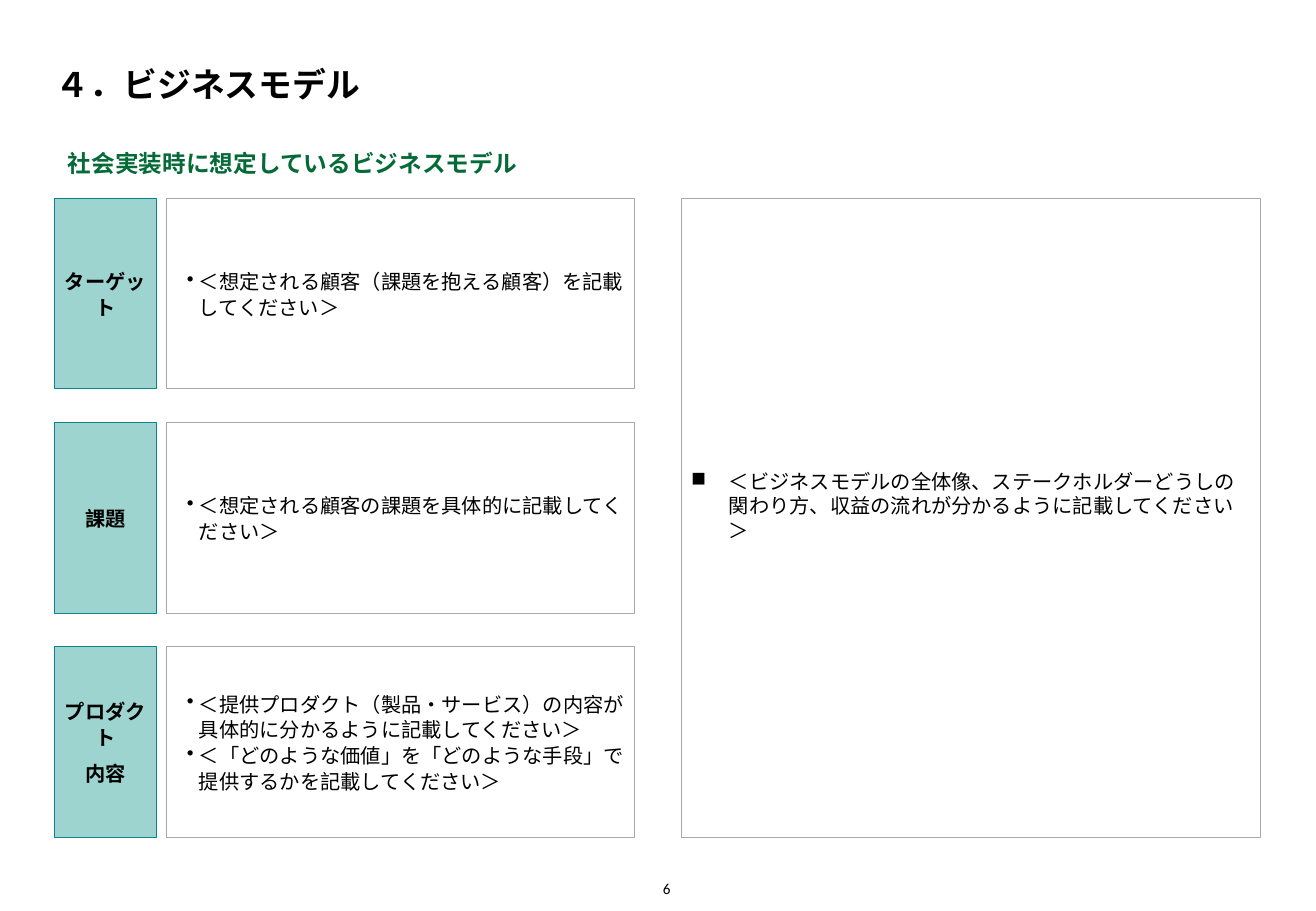
from dataclasses import dataclass

from lxml import etree
from pptx import Presentation
from pptx import util as u
from pptx.dml.color import RGBColor
from pptx.enum import shapes, text
from pptx.oxml import ns


@dataclass(frozen=True)
class Theme:
    ink: str = "000000"
    green: str = "046A38"
    mint: str = "9DD4CF"
    teal: str = "0D8390"
    gray: str = "A7A8AA"
    white: str = "FFFFFF"
    head: float = 20
    lead: float = 14
    body: float = 12
    note: float = 9


@dataclass(frozen=True)
class Area:
    left: float
    top: float
    width: float
    height: float


@dataclass(frozen=True)
class Style:
    size: float
    font: str = "Calibri"
    color: str = "000000"
    bold: bool = False
    align: text.PP_ALIGN = text.PP_ALIGN.LEFT
    anchor: text.MSO_ANCHOR = text.MSO_ANCHOR.MIDDLE
    inset: tuple[float, float, float, float] = (0.2, 0.2, 0.2, 0.2)
    space: float = 0
    pitch: float = 1
    bullet: str = ""
    margin: float = 0
    hang: float = 0


@dataclass(frozen=True)
class Row:
    label: tuple[str, ...]
    body: tuple[str, ...]


T = Theme()
NONE = (0, 0, 0, 0)
TITLE = Style(T.head, color=T.ink, bold=True, anchor=text.MSO_ANCHOR.BOTTOM, inset=NONE)
LEAD = Style(T.lead, color=T.green, bold=True, inset=(0.25, 0.13, 0.25, 0.13))
PAGE = Style(T.note, color=T.ink, align=text.PP_ALIGN.RIGHT,
             anchor=text.MSO_ANCHOR.BOTTOM, inset=NONE)
LABEL = Style(T.body, "Arial", T.ink, True, text.PP_ALIGN.CENTER, space=6, pitch=1.06)
BODY = Style(T.body, "Arial", T.ink, pitch=1.06, bullet="•", margin=0.48, hang=0.25)
MODEL = Style(T.body, color=T.ink, inset=(0.2, 0.2, 0.2, 0.7),
              bullet="■", margin=0.79, hang=0.79)

TOP, HIGH, STEP = 4.14, 3.99, 4.69
ROWS = (
    Row(("ターゲット",), ("＜想定される顧客（課題を抱える顧客）を記載してください＞",)),
    Row(("課題",), ("＜想定される顧客の課題を具体的に記載してください＞",)),
    Row(("プロダクト", "内容"),
        ("＜提供プロダクト（製品・サービス）の内容が具体的に分かるように記載してください＞",
         "＜「どのような価値」を「どのような手段」で提供するかを記載してください＞")),
)


def mark(para, style: Style) -> None:
    """Give a paragraph its bullet and hanging indent."""
    props = para._p.get_or_add_pPr()
    props.set("marL", str(u.Cm(style.margin)))
    props.set("indent", str(-u.Cm(style.hang)))
    etree.SubElement(props, ns.qn("a:buChar")).set("char", style.bullet)


def write(shape, lines: tuple[str, ...], style: Style) -> None:
    frame = shape.text_frame
    frame.word_wrap = True
    frame.vertical_anchor = style.anchor
    (frame.margin_left, frame.margin_top,
     frame.margin_right, frame.margin_bottom) = map(u.Cm, style.inset)
    for num, line in enumerate(lines):
        para = frame.add_paragraph() if num else frame.paragraphs[0]
        if style.bullet:
            mark(para, style)
        para.alignment = style.align
        para.line_spacing = style.pitch
        if num:
            para.space_before = u.Pt(style.space)
        run = para.add_run()
        run.text = line
        run.font.name = style.font
        run.font.size = u.Pt(style.size)
        run.font.bold = style.bold
        run.font.color.rgb = RGBColor.from_string(style.color)


def place(area: Area) -> tuple[u.Length, ...]:
    return u.Cm(area.left), u.Cm(area.top), u.Cm(area.width), u.Cm(area.height)


def add_text(slide, area: Area, line: str, style: Style) -> None:
    write(slide.shapes.add_textbox(*place(area)), (line,), style)


def add_box(slide, area: Area, lines: tuple[str, ...], style: Style,
            fill: str, edge: str) -> None:
    box = slide.shapes.add_shape(shapes.MSO_SHAPE.RECTANGLE, *place(area))
    box.shadow.inherit = False
    box.fill.solid()
    box.fill.fore_color.rgb = RGBColor.from_string(fill)
    box.line.color.rgb = RGBColor.from_string(edge)
    box.line.width = u.Pt(0.5)
    write(box, lines, style)


def main() -> None:
    deck = Presentation()
    deck.slide_width, deck.slide_height = u.Cm(27.51), u.Cm(19.05)
    slide = deck.slides.add_slide(deck.slide_layouts[6])
    add_text(slide, Area(1.17, 0.38, 25.2, 1.8), "４．ビジネスモデル", TITLE)
    add_text(slide, Area(1.17, 2.82, 12.09, 1.19),
             "社会実装時に想定しているビジネスモデル", LEAD)
    for num, row in enumerate(ROWS):
        top = TOP + num * STEP
        add_box(slide, Area(1.14, top, 2.13, HIGH), row.label, LABEL, T.mint, T.teal)
        add_box(slide, Area(3.48, top, 9.78, HIGH), row.body, BODY, T.white, T.gray)
    add_box(slide, Area(14.25, TOP, 12.09, 2 * STEP + HIGH),
            ("＜ビジネスモデルの全体像、ステークホルダーどうしの関わり方、"
             "収益の流れが分かるように記載してください＞",),
            MODEL, T.white, T.gray)
    add_text(slide, Area(13.51, 18.29, 0.51, 0.48), "6", PAGE)
    deck.save("out.pptx")


if __name__ == "__main__":
    main()
